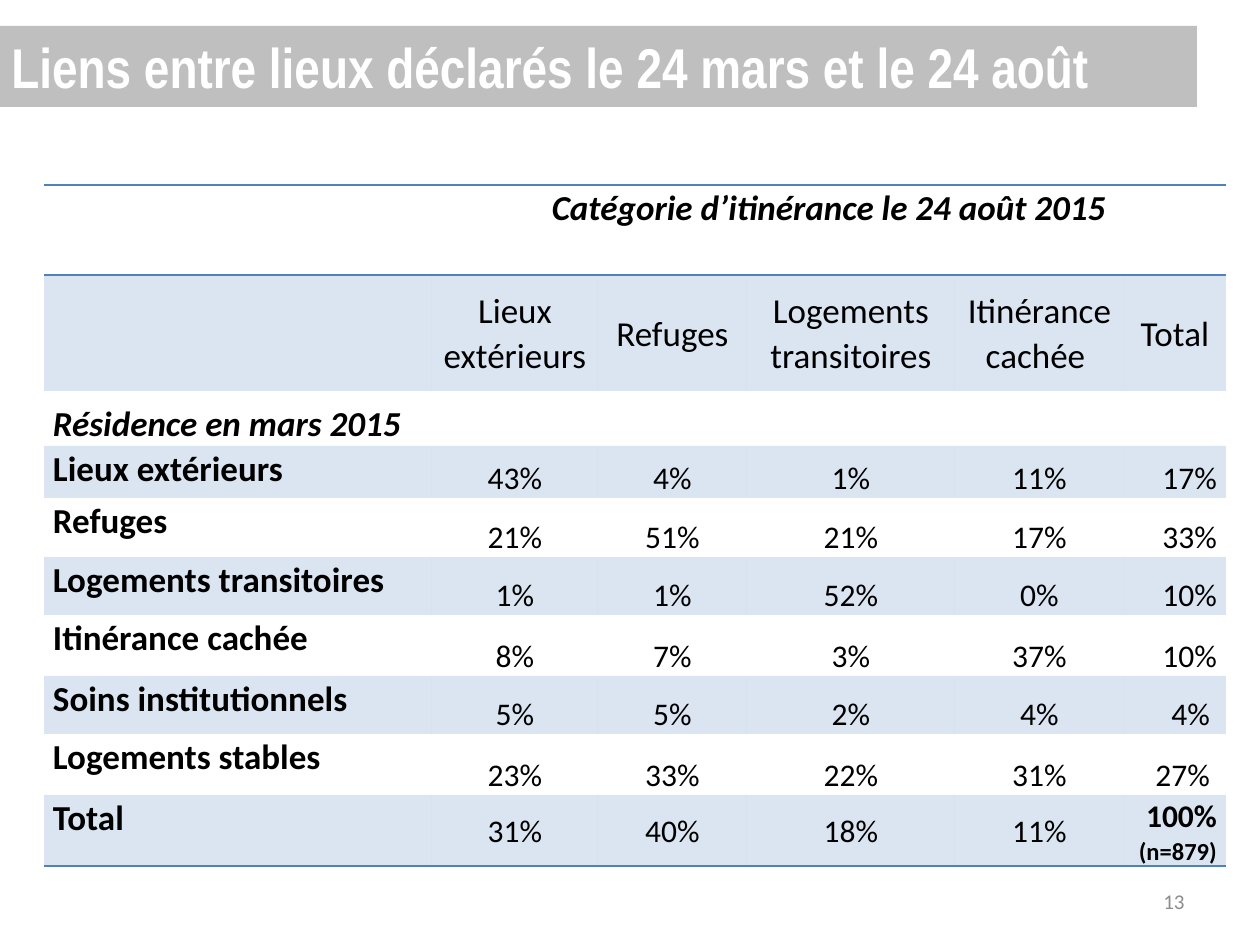
from lxml import etree
from pptx import Presentation
from pptx.dml.color import RGBColor
from pptx.enum.shapes import MSO_SHAPE as SHAPE
from pptx.enum.text import MSO_ANCHOR as ANCHOR, MSO_AUTO_SIZE as AUTO, PP_ALIGN as ALIGN
from pptx.oxml.ns import qn
from pptx.util import Emu, Pt

BLUE, GREY, BLACK, WHITE = "4F81BD", "BFBFBF", "000000", "FFFFFF"
PLAIN_TABLE = "{2D5ABB26-0587-4C30-8999-92F81FD0307C}"

COL_WIDTHS = [388, 166, 149, 208, 169, 102]
ROW_HEIGHTS = [90, 116, 55, 52, 59, 58, 61, 58, 61, 71]
HEADINGS = ["Lieux extérieurs", "Refuges", "Logements transitoires",
            "Itinérance cachée ", "Total"]
RESIDENCES = [
    ("Lieux extérieurs", "43%", "4%", "1%", "11%", "17%"),
    ("Refuges", "21%", "51%", "21%", "17%", "33%"),
    ("Logements transitoires", "1%", "1%", "52%", "0%", "10%"),
    ("Itinérance cachée", "8%", "7%", "3%", "37%", "10%"),
    ("Soins institutionnels", "5%", "5%", "2%", "4%", "4% "),
    ("Logements stables", "23%", "33%", "22%", "31%", "27% "),
    ("Total", "31%", "40%", "18%", "11%", "100%"),
]


def px(n):
    return Emu(round(n * 914400 / 126))


def rgb(color):
    return RGBColor.from_string(color)


def add_run(p, text, size, color=BLACK, bold=False, italic=False, font="Calibri"):
    r = p.add_run()
    r.text = text
    f = r.font
    f.name, f.size, f.bold, f.italic = font, Pt(size), bold, italic
    f.color.rgb = rgb(color)


def write_cell(cell, text, size=20, align=ALIGN.LEFT, anchor=ANCHOR.TOP,
               spacing=1.06, **style):
    cell.vertical_anchor = anchor
    p = cell.text_frame.paragraphs[0]
    p.alignment, p.line_spacing = align, spacing
    add_run(p, text, size, **style)


def tint_cell(cell):
    cell.fill.solid()
    cell.fill.fore_color.rgb = rgb(BLUE)
    color = cell.fill._xPr.find(".//" + qn("a:srgbClr"))
    etree.SubElement(color, qn("a:alpha"), val="20000")


def rule_cell(cell, *sides):
    """Border lines come before the fill, in the order given."""
    tc_pr = cell._tc.get_or_add_tcPr()
    for i, side in enumerate(sides):
        ln = etree.Element(qn("a:ln" + side), w=str(Pt(1)))
        fill = etree.SubElement(ln, qn("a:solidFill"))
        etree.SubElement(fill, qn("a:srgbClr"), val=BLUE)
        tc_pr.insert(i, ln)


def add_title(slide, text):
    sp = slide.shapes.add_shape(SHAPE.RECTANGLE, px(-1), px(26), px(1198), px(81))
    sp.shadow.inherit = False
    sp.fill.solid()
    sp.fill.fore_color.rgb = rgb(GREY)
    sp.line.fill.background()
    tf = sp.text_frame
    tf.word_wrap, tf.auto_size = True, AUTO.SHAPE_TO_FIT_TEXT
    tf.vertical_anchor = ANCHOR.TOP
    p = tf.paragraphs[0]
    p.alignment = ALIGN.LEFT
    # Hanging indent and space before as a share of the line
    p_pr = p._p.get_or_add_pPr()
    p_pr.set("marL", str(px(16)))
    p_pr.set("indent", str(px(-16)))
    before = etree.SubElement(p_pr, qn("a:spcBef"))
    etree.SubElement(before, qn("a:spcPct"), val="30000")
    add_run(p, text, 32, WHITE, bold=True, font="Arial Narrow")


def add_page_number(slide, text):
    box = slide.shapes.add_textbox(px(903), px(876), px(294), px(50))
    tf = box.text_frame
    tf.word_wrap, tf.vertical_anchor = True, ANCHOR.MIDDLE
    p = tf.paragraphs[0]
    p.alignment = ALIGN.RIGHT
    add_run(p, text, 12, "8C8C8C")


def add_plain_table(slide, left, top):
    frame = slide.shapes.add_table(len(ROW_HEIGHTS), len(COL_WIDTHS), px(left), px(top),
                                   px(sum(COL_WIDTHS)), px(sum(ROW_HEIGHTS)))
    table = frame.table
    table.first_row = table.horz_banding = False
    table._tbl.tblPr.find(qn("a:tableStyleId")).text = PLAIN_TABLE
    for col, width in zip(table.columns, COL_WIDTHS):
        col.width = px(width)
    for row, height in zip(table.rows, ROW_HEIGHTS):
        row.height = px(height)
    return table


def format_cells(table):
    last = len(ROW_HEIGHTS) - 1
    for i, row in enumerate(table.rows):
        for cell in row.cells:
            cell.margin_left = cell.margin_right = px(9)
            cell.margin_top = cell.margin_bottom = 0
            if i % 2:
                tint_cell(cell)
            else:
                cell.fill.background()
            if i == 0:
                rule_cell(cell, "T", "B")
            elif i == last:
                rule_cell(cell, "B")


def fill_table(table):
    # Headings
    table.cell(0, 1).merge(table.cell(0, 5))
    write_cell(table.cell(0, 1), "Catégorie d’itinérance le 24 août 2015",
               align=ALIGN.CENTER, bold=True, italic=True)
    for c, heading in enumerate(HEADINGS, 1):
        write_cell(table.cell(1, c), heading, align=ALIGN.CENTER, anchor=ANCHOR.MIDDLE)
    write_cell(table.cell(2, 0), "Résidence en mars 2015", anchor=ANCHOR.BOTTOM,
               spacing=1.15, bold=True, italic=True)

    # Shares by place of residence
    for i, (label, *shares) in enumerate(RESIDENCES, 3):
        is_total = label == "Total"
        write_cell(table.cell(i, 0), label, bold=True)
        for c, share in enumerate(shares, 1):
            is_last = c == len(shares)
            write_cell(table.cell(i, c), share, 18,
                       ALIGN.RIGHT if is_last else ALIGN.CENTER,
                       ANCHOR.MIDDLE if is_total else ANCHOR.BOTTOM,
                       bold=is_total and is_last)

    # Sample size under the grand total
    p = table.cell(9, 5).text_frame.add_paragraph()
    p.alignment, p.line_spacing = ALIGN.RIGHT, 1.06
    add_run(p, "(n=879)", 14, bold=True)


def main():
    prs = Presentation()
    prs.slide_width, prs.slide_height = px(1260), px(945)
    slide = prs.slides.add_slide(prs.slide_layouts[6])
    add_page_number(slide, "13")
    add_title(slide, "Liens entre lieux déclarés le 24 mars et le 24 août")
    table = add_plain_table(slide, 44, 185)
    format_cells(table)
    fill_table(table)
    prs.save("out.pptx")


if __name__ == "__main__":
    main()
